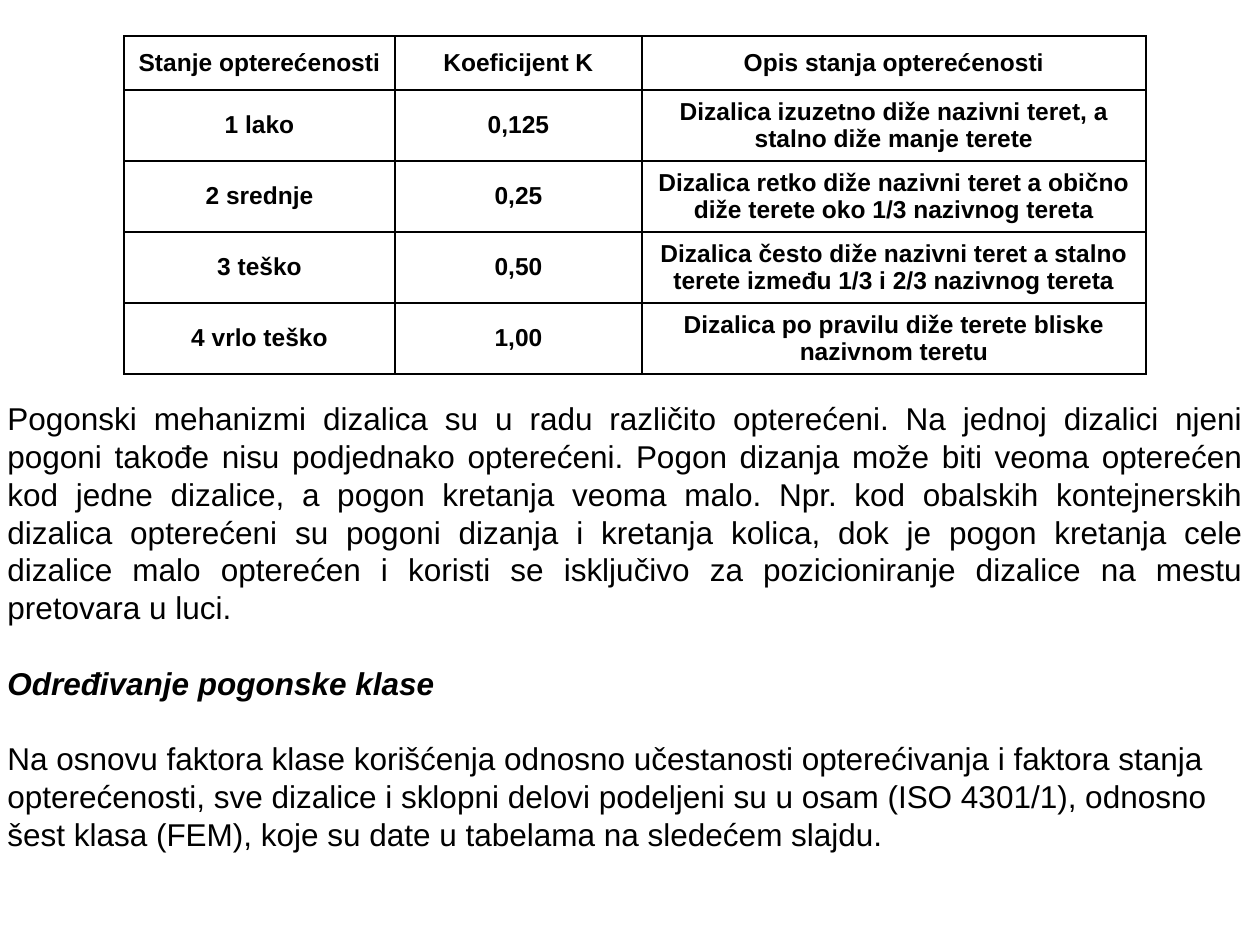
from dataclasses import dataclass

from lxml import etree
from pptx import Presentation
from pptx.dml.color import RGBColor
from pptx.enum.text import MSO_ANCHOR, PP_ALIGN
from pptx.oxml.ns import qn
from pptx.util import Pt

PX = 914400 // 126
CENTER, JUSTIFY, LEFT = PP_ALIGN.CENTER, PP_ALIGN.JUSTIFY, PP_ALIGN.LEFT
MIDDLE = MSO_ANCHOR.MIDDLE


@dataclass(frozen=True)
class Theme:
    font: str = "Arial"
    ink: str = "000000"
    paper: str = "FFFFFF"
    table_size: int = 14
    body_size: int = 18
    body_line: float = 21.6
    border: int = 1


theme = Theme()


def format_paragraph(paragraph, size, alignment, bold=False, italic=False):
    paragraph.alignment = alignment
    for run in paragraph.runs:
        font = run.font
        font.name, font.size = theme.font, Pt(size)
        font.bold, font.italic = bold, italic
        font.color.rgb = RGBColor.from_string(theme.ink)


def add_borders(cell):
    properties = cell._tc.get_or_add_tcPr()
    for position, side in enumerate(("a:lnL", "a:lnR", "a:lnT", "a:lnB")):
        line = etree.Element(qn(side), w=str(Pt(theme.border)))
        fill = etree.SubElement(line, qn("a:solidFill"))
        etree.SubElement(fill, qn("a:srgbClr"), val=theme.ink)
        properties.insert(position, line)


presentation = Presentation()
presentation.slide_width = 1260 * PX
presentation.slide_height = 945 * PX
slide = presentation.slides.add_slide(presentation.slide_layouts[6])

# Load condition table
load_rows = [
    ("Stanje opterećenosti", "Koeficijent K", "Opis stanja opterećenosti"),
    ("1 lako", "0,125", "Dizalica izuzetno diže nazivni teret, a stalno diže manje terete"),
    ("2 srednje", "0,25",
     "Dizalica retko diže nazivni teret a obično diže terete oko 1/3 nazivnog tereta"),
    ("3 teško", "0,50",
     "Dizalica često diže nazivni teret a stalno terete između 1/3 i 2/3 nazivnog tereta"),
    ("4 vrlo teško", "1,00", "Dizalica po pravilu diže terete bliske nazivnom teretu"),
]
column_widths = [271, 247, 504]
row_heights = [54] + [71] * 4
table = slide.shapes.add_table(
    len(load_rows), len(column_widths), 124 * PX, 36 * PX,
    sum(column_widths) * PX, sum(row_heights) * PX,
).table
for column, width in zip(table.columns, column_widths):
    column.width = width * PX
for row, height, texts in zip(table.rows, row_heights, load_rows):
    row.height = height * PX
    for cell, text in zip(row.cells, texts):
        cell.text_frame.text = text
        cell.vertical_anchor = MIDDLE
        cell.fill.solid()
        cell.fill.fore_color.rgb = RGBColor.from_string(theme.paper)
        add_borders(cell)
        format_paragraph(cell.text_frame.paragraphs[0], theme.table_size, CENTER, bold=True)

# Explanation below the table
explanation = [
    ("Pogonski mehanizmi dizalica su u radu različito opterećeni. Na jednoj dizalici njeni "
     "pogoni takođe nisu podjednako opterećeni. Pogon dizanja može biti veoma opterećen kod "
     "jedne dizalice, a pogon kretanja veoma malo. Npr. kod obalskih kontejnerskih dizalica "
     "opterećeni su pogoni dizanja i kretanja kolica, dok je pogon kretanja cele dizalice malo "
     "opterećen i koristi se isključivo za pozicioniranje dizalice na mestu pretovara u luci.",
     JUSTIFY, False),
    ("Određivanje pogonske klase", LEFT, True),
    ("Na osnovu faktora klase korišćenja odnosno učestanosti opterećivanja i faktora stanja "
     "opterećenosti, sve dizalice i sklopni delovi podeljeni su u osam (ISO 4301/1), odnosno "
     "šest klasa (FEM), koje su date u tabelama na sledećem slajdu.", LEFT, False),
]
text_frame = slide.shapes.add_textbox(-5 * PX, 393 * PX, 1260 * PX, 466 * PX).text_frame
text_frame.word_wrap = True
text_frame.vertical_anchor = MIDDLE
text_frame.text = "\n".join(text for text, _, _ in explanation)
for index, (paragraph, (_, alignment, heading)) in enumerate(
        zip(text_frame.paragraphs, explanation)):
    format_paragraph(paragraph, theme.body_size, alignment, bold=heading, italic=heading)
    paragraph.line_spacing = Pt(theme.body_line)
    paragraph.space_before = Pt(theme.body_line if index else 0)

presentation.save("out.pptx")
